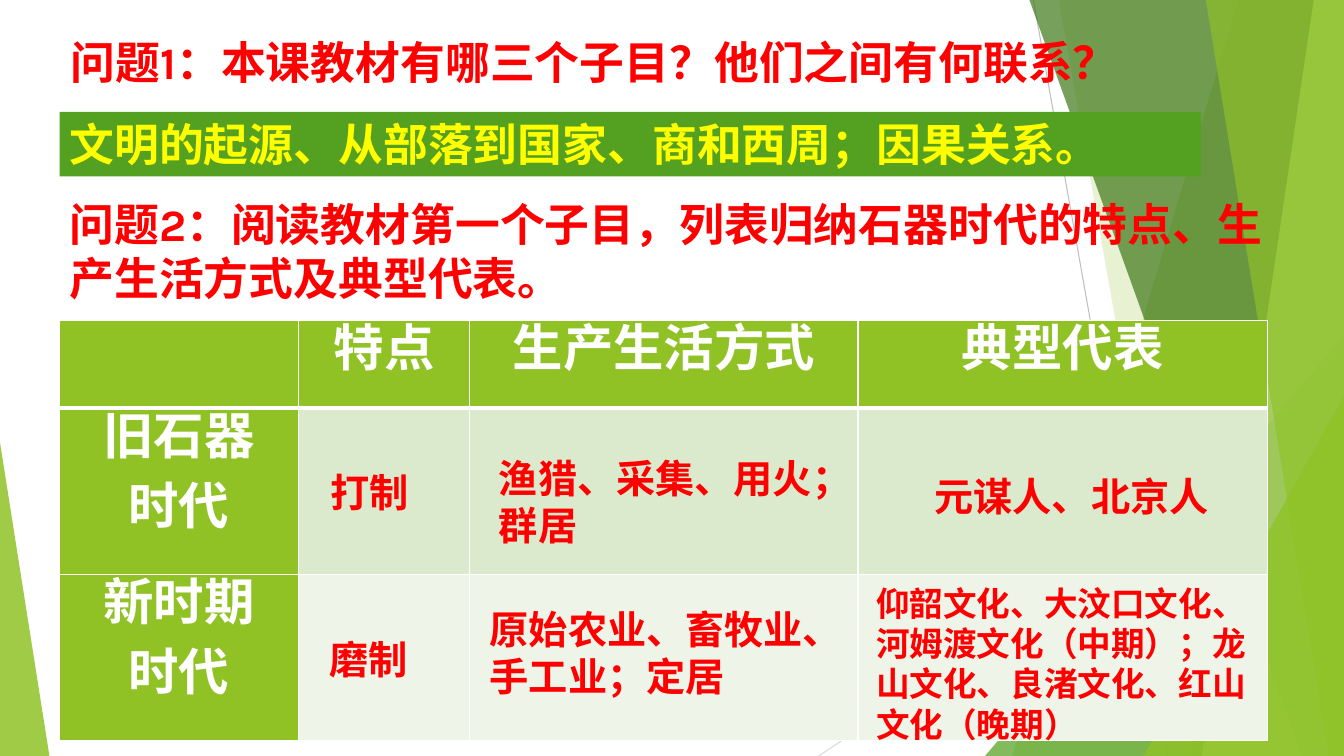
from dataclasses import dataclass

import pptx
import pptx.dml.color
import pptx.enum.shapes
import pptx.enum.text
import pptx.oxml
import pptx.oxml.ns
import pptx.util
from pptx.dml.color import RGBColor
from pptx.util import Inches

FONT = "Karla"
RED = RGBColor(0xFF, 0x00, 0x00)
YELLOW = RGBColor(0xFF, 0xFF, 0x00)
WHITE = RGBColor(0xFF, 0xFF, 0xFF)
LIME = RGBColor(0x90, 0xC2, 0x26)
PALE_LIME = RGBColor(0xC0, 0xE4, 0x74)
GREEN = RGBColor(0x54, 0xA0, 0x21)
DARK_GREEN = RGBColor(0x3F, 0x78, 0x19)
BAND_DARK = RGBColor(0xDB, 0xE9, 0xCD)
BAND_LIGHT = RGBColor(0xEE, 0xF4, 0xE8)
GREY = RGBColor(0xBF, 0xBF, 0xBF)
LIGHT_GREY = RGBColor(0xD9, 0xD9, 0xD9)
WIDTH, HEIGHT = 13.33, 7.5


@dataclass
class Ray:
    start: tuple[float, float]
    end: tuple[float, float]
    color: RGBColor


@dataclass
class Facet:
    """Band from a slanted left edge to the right side of the slide."""
    top_x: float
    bottom_x: float
    color: RGBColor
    opacity: int


@dataclass
class Corner:
    """Triangle standing on the bottom edge, with its apex at a slide side."""
    left: float
    top: float
    width: float
    apex: int
    color: RGBColor
    opacity: int


@dataclass
class Passage:
    left: float
    top: float
    width: float
    height: float
    size: int
    text: str


RAYS = [
    Ray((10.25, 0), (11.58, HEIGHT), GREY),
    Ray((WIDTH, 4.03), (8.12, HEIGHT), LIGHT_GREY),
]
DECORATION = [
    Facet(12.28, 10.04, LIME, 30),
    Facet(10.5, 11.83, LIME, 20),
    Corner(9.77, 3.33, 3.56, 1, GREEN, 72),
    Facet(10.21, 12.91, DARK_GREEN, 70),
    Facet(13.03, 11.92, PALE_LIME, 70),
    Facet(11.96, 13.18, LIME, 65),
    Corner(11.34, 3.93, 1.99, 1, LIME, 80),
    Corner(0, 4.39, 0.49, 0, LIME, 85),
]
QUESTION_1 = Passage(0.6, 0.29, 11.32, 0.64, 32, "问题1：本课教材有哪三个子目？他们之间有何联系？")
ANSWER_1 = Passage(0.59, 1.11, 11.32, 0.64, 32, "文明的起源、从部落到国家、商和西周；因果关系。")
QUESTION_2 = Passage(0.59, 1.9, 12.46, 1.18, 32,
                     "问题2：阅读教材第一个子目，列表归纳石器时代的特点、生产生活方式及典型代表。")
TABLE_ANSWERS = [
    Passage(4.85, 4.46, 3.64, 1.04, 28, "渔猎、采集、用火；群居"),
    Passage(3.17, 6.25, 1.4, 0.57, 28, "磨制"),
    Passage(3.18, 4.6, 1.4, 0.57, 28, "打制"),
    Passage(9.17, 4.64, 2.94, 0.57, 28, "元谋人、北京人"),
    Passage(4.76, 5.96, 3.64, 1.04, 28, "原始农业、畜牧业、手工业；定居"),
    Passage(8.59, 5.73, 3.98, 1.72, 24,
            "仰韶文化、大汶口文化、河姆渡文化（中期）；龙山文化、良渚文化、红山文化（晚期）"),
]
COLUMN_WIDTHS = [2.37, 1.7, 3.85, 4.06]
ROW_HEIGHTS = [0.87, 1.65, 1.65]
HEADINGS = [
    ["", "特点", "生产生活方式", "典型代表"],
    ["旧石器\n时代", "", "", ""],
    ["新时期\n时代", "", "", ""],
]
BANDS = [LIME, BAND_DARK, BAND_LIGHT]


def add_child(parent, tag: str, **attributes: str):
    child = pptx.oxml.parse_xml(f"<{tag} {pptx.oxml.ns.nsdecls('a')}/>")
    for name, value in attributes.items():
        child.set(name, value)
    parent.append(child)
    return child


def style_paragraph(paragraph, size: int, color: RGBColor, align) -> None:
    paragraph.alignment = align
    font = paragraph.font
    font.name, font.size, font.bold = FONT, pptx.util.Pt(size), True
    font.color.rgb = color
    defaults = paragraph._p.pPr.find(pptx.oxml.ns.qn("a:defRPr"))
    add_child(defaults, "a:ea", typeface=FONT)


def paint(shape, color: RGBColor, opacity: int = 100) -> None:
    shape.shadow.inherit = False
    shape.line.fill.background()
    shape.fill.solid()
    shape.fill.fore_color.rgb = color
    if opacity < 100:
        srgb = shape._element.spPr.find(".//" + pptx.oxml.ns.qn("a:srgbClr"))
        add_child(srgb, "a:alpha", val=str(opacity * 1000))


def add_ray(shapes, ray: Ray) -> None:
    line = shapes.add_connector(pptx.enum.shapes.MSO_CONNECTOR.STRAIGHT,
                                *map(Inches, ray.start + ray.end))
    line.line.color.rgb = ray.color
    line.line.width = pptx.util.Pt(0.75)
    add_child(line._element.spPr, "a:effectLst")


def add_facet(shapes, facet: Facet) -> None:
    outline = shapes.build_freeform(Inches(facet.top_x), 0)
    corners = [(WIDTH, 0), (WIDTH, HEIGHT), (facet.bottom_x, HEIGHT)]
    outline.add_line_segments([(Inches(x), Inches(y)) for x, y in corners])
    paint(outline.convert_to_shape(), facet.color, facet.opacity)


def add_corner(shapes, corner: Corner) -> None:
    triangle = shapes.add_shape(
        pptx.enum.shapes.MSO_SHAPE.ISOSCELES_TRIANGLE, Inches(corner.left),
        Inches(corner.top), Inches(corner.width), Inches(HEIGHT - corner.top))
    triangle.adjustments[0] = corner.apex
    paint(triangle, corner.color, corner.opacity)


def write_passage(shape, passage: Passage, color: RGBColor = RED) -> None:
    shape.left, shape.top = Inches(passage.left), Inches(passage.top)
    shape.width, shape.height = Inches(passage.width), Inches(passage.height)
    frame = shape.text_frame
    frame.text = passage.text
    frame.word_wrap = True
    frame.auto_size = pptx.enum.text.MSO_AUTO_SIZE.NONE
    frame.vertical_anchor = pptx.enum.text.MSO_ANCHOR.TOP
    style_paragraph(frame.paragraphs[0], passage.size, color, pptx.enum.text.PP_ALIGN.LEFT)


def add_passage(shapes, passage: Passage) -> None:
    write_passage(shapes.add_textbox(0, 0, 0, 0), passage)


def set_borders(cell, bottom_points: int) -> None:
    properties = cell._tc.get_or_add_tcPr()
    for position, side in enumerate(["lnL", "lnR", "lnT", "lnB"]):
        points = bottom_points if side == "lnB" else 1
        border = add_child(properties, f"a:{side}", w=str(pptx.util.Pt(points)))
        add_child(add_child(border, "a:solidFill"), "a:srgbClr", val=str(WHITE))
        properties.insert(position, border)


def add_ages_table(shapes) -> None:
    table = shapes.add_table(len(ROW_HEIGHTS), len(COLUMN_WIDTHS), Inches(0.59), Inches(3.18),
                             Inches(sum(COLUMN_WIDTHS)), Inches(sum(ROW_HEIGHTS))).table
    for column, width in zip(table.columns, COLUMN_WIDTHS):
        column.width = Inches(width)
    for r, height in enumerate(ROW_HEIGHTS):
        table.rows[r].height = Inches(height)
        for c, heading in enumerate(HEADINGS[r]):
            cell = table.cell(r, c)
            cell.fill.solid()
            cell.fill.fore_color.rgb = LIME if c == 0 else BANDS[r]
            set_borders(cell, 3 if r == 0 else 1)
            cell.margin_left = cell.margin_right = Inches(0.07)
            cell.margin_top = cell.margin_bottom = 0
            cell.text = heading
            for paragraph in cell.text_frame.paragraphs:
                style_paragraph(paragraph, 36, WHITE, pptx.enum.text.PP_ALIGN.CENTER)
                paragraph.space_before = pptx.util.Pt(8)


def main() -> None:
    deck = pptx.Presentation()
    deck.slide_width, deck.slide_height = Inches(WIDTH), Inches(HEIGHT)
    shapes = deck.slides.add_slide(deck.slide_layouts[5]).shapes
    for ray in RAYS:
        add_ray(shapes, ray)
    for part in DECORATION:
        if isinstance(part, Facet):
            add_facet(shapes, part)
        else:
            add_corner(shapes, part)
    add_passage(shapes, QUESTION_2)
    add_ages_table(shapes)
    for answer in TABLE_ANSWERS:
        add_passage(shapes, answer)
    write_passage(shapes.title, QUESTION_1)
    shapes._spTree.append(shapes.title._element)
    banner = shapes.add_shape(pptx.enum.shapes.MSO_SHAPE.RECTANGLE, 0, 0, 0, 0)
    paint(banner, GREEN)
    write_passage(banner, ANSWER_1, YELLOW)
    deck.save("out.pptx")


if __name__ == "__main__":
    main()
